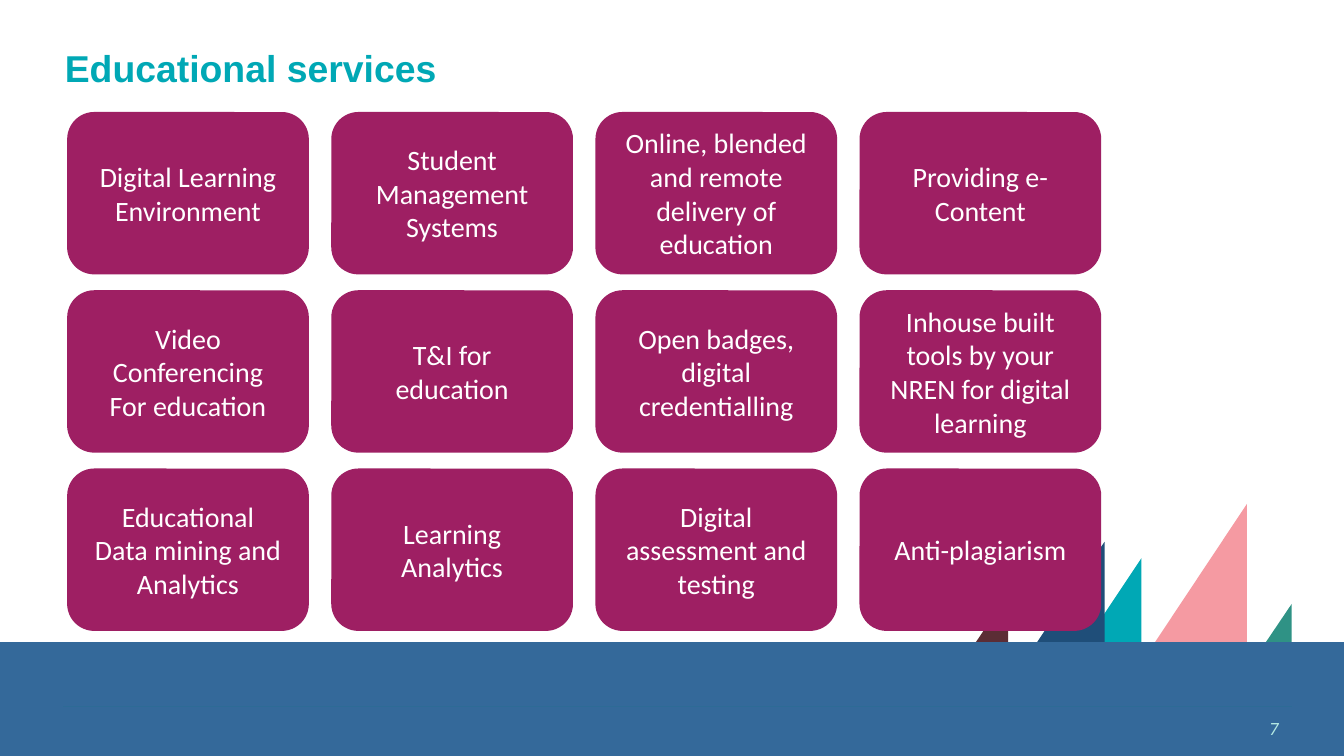
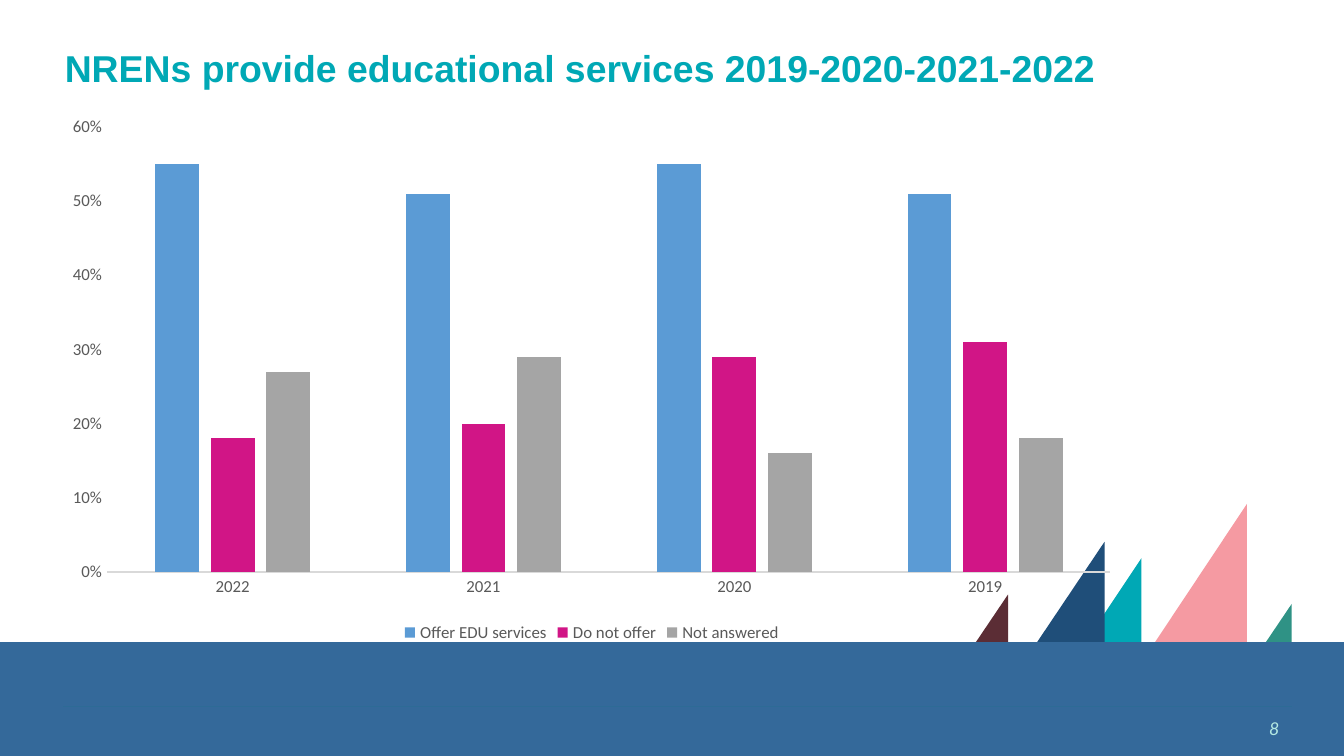
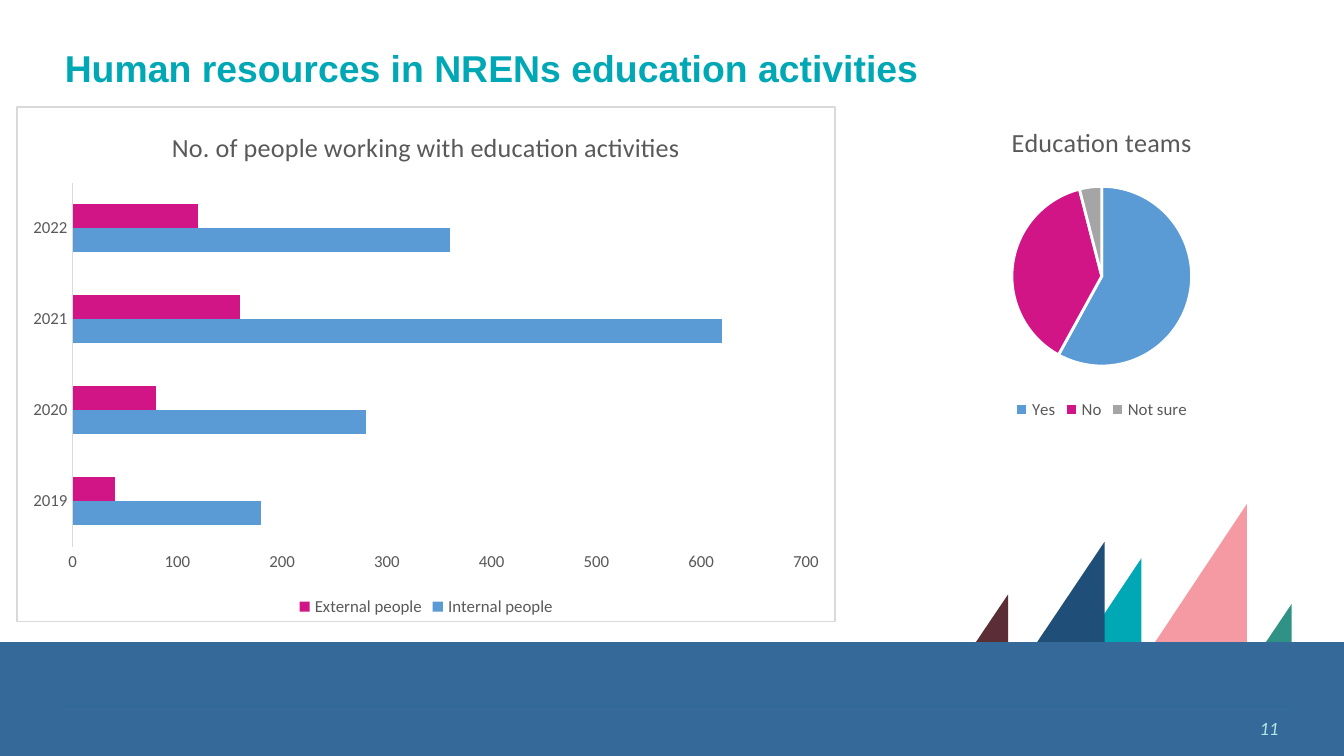
"""Build three slides on the educational services that NRENs offer."""
import dataclasses
import typing

import lxml.etree
import pptx
import pptx.chart.chart
import pptx.chart.data
import pptx.dml.color
import pptx.enum.chart
import pptx.enum.shapes
import pptx.enum.text
import pptx.oxml
import pptx.oxml.ns
import pptx.slide
import pptx.util

Pt = pptx.util.Pt
SHAPE = pptx.enum.shapes.MSO_SHAPE
ALIGN = pptx.enum.text.PP_ALIGN
MIDDLE = pptx.enum.text.MSO_ANCHOR.MIDDLE
KIND = pptx.enum.chart.XL_CHART_TYPE


@dataclasses.dataclass(frozen=True)
class Theme:
    """Colours, fonts and type sizes of the deck."""
    teal: str = "00A8B5"
    band: str = "34699A"
    rule: str = "2D6B96"
    number: str = "B4E9E2"
    card: str = "9E1F63"
    white: str = "FFFFFF"
    blue: str = "5B9BD5"
    pink: str = "D11586"
    grey: str = "A5A5A5"
    axis: str = "D9D9D9"
    chart_text: str = "595959"
    heading_font: str = "Arial"
    body_font: str = "Calibri"
    title_size: float = 20
    card_size: float = 15
    chart_title_size: float = 14
    number_size: float = 10
    chart_size: float = 9


THEME = Theme()


class Area(typing.NamedTuple):
    """A place on the slide, in points."""
    left: float
    top: float
    width: float
    height: float

    def lengths(self) -> list[pptx.util.Length]:
        """Give the four lengths that add methods take."""
        return [Pt(value) for value in self]


class Sail(typing.NamedTuple):
    """A triangle standing on the band, before its quarter turn."""
    area: Area
    color: str


class Series(typing.NamedTuple):
    """A named row of chart values with its colour."""
    name: str
    values: tuple[float, ...]
    color: str = ""


@dataclasses.dataclass(frozen=True)
class ChartPlan:
    """All that one chart needs."""
    kind: pptx.enum.chart.XL_CHART_TYPE
    area: Area
    categories: tuple[str, ...]
    series: tuple[Series, ...]
    title: str = ""
    number_format: str = "General"
    top_value: float = 0
    step: float = 0
    gap: int = 0
    overlap: int = 0
    point_colors: tuple[str, ...] = ()
    framed: bool = False


BAND = Area(0, 344, 720, 61)
BAND_STEP = Area(463.5, 344, 256.5, 27.5)
NUMBER_AREA = Area(530, 379.5, 162, 21.5)
SAILS = (
    Sail(Area(561.5, 309, 60, 40), THEME.teal),
    Sail(Area(537, 301, 65.5, 44), "1F4E79"),
    Sail(Area(596, 284.5, 86.5, 57.5), "F59AA2"),
    Sail(Area(504, 325.5, 43, 29), "5B2D35"),
    Sail(Area(656, 330.5, 43, 29), "2F9285"),
)
FIRST_CARD = Area(36, 60, 129.5, 87)
COLUMN_STEP, ROW_STEP = 141.5, 95.5
SERVICES = (
    ("Digital Learning Environment", "Student\nManagement\nSystems",
     "Online, blended and remote delivery of education", "Providing e-Content"),
    ("Video\nConferencing\nFor education", "T&I for\neducation",
     "Open badges, digital credentialling",
     "Inhouse built tools by your NREN for digital learning"),
    ("Educational\nData mining and Analytics", "Learning\nAnalytics",
     "Digital assessment and testing", "Anti-plagiarism"),
)
OFFERS = ChartPlan(
    KIND.COLUMN_CLUSTERED, Area(27.5, 57, 579, 290),
    ("2022", "2021", "2020", "2019"),
    (Series("Offer EDU services", (0.55, 0.51, 0.55, 0.51), THEME.blue),
     Series("Do not offer", (0.18, 0.2, 0.29, 0.31), THEME.pink),
     Series("Not answered", (0.27, 0.29, 0.16, 0.18), THEME.grey)),
    number_format="0%", top_value=0.6, step=0.1, gap=219, overlap=-27)
PEOPLE = ChartPlan(
    KIND.BAR_CLUSTERED, Area(8.75, 57, 439, 276.5),
    ("2019", "2020", "2021", "2022"),
    (Series("Internal people", (180, 280, 620, 360), THEME.blue),
     Series("External people", (40, 80, 160, 120), THEME.pink)),
    title="No. of people working with education activities",
    top_value=700, step=100, gap=182, framed=True)
TEAMS = ChartPlan(
    KIND.PIE, Area(448, 57, 284.5, 170.5), ("Yes", "No", "Not sure"),
    (Series("Series 1", (58, 38, 4)),), title="Education teams",
    point_colors=(THEME.blue, THEME.pink, THEME.grey))


def rgb(color: str) -> pptx.dml.color.RGBColor:
    """Turn a hex colour into an RGB value."""
    return pptx.dml.color.RGBColor.from_string(color)


def style_font(font: typing.Any, size: float, color: str, name: str = THEME.body_font,
               bold: bool = False, italic: bool = False) -> None:
    """Set every trait of a font."""
    font.name, font.size, font.bold, font.italic = name, Pt(size), bold, italic
    font.color.rgb = rgb(color)


def add_filled(shapes: typing.Any, kind: SHAPE, area: Area, color: str) -> typing.Any:
    """Add a flat shape without outline or shadow."""
    shape = shapes.add_shape(kind, *area.lengths())
    shape.shadow.inherit = False
    shape.fill.solid()
    shape.fill.fore_color.rgb = rgb(color)
    shape.line.fill.background()
    return shape


def add_scenery(page: pptx.slide.Slide) -> None:
    """Draw the band, its rule and the sails."""
    add_filled(page.shapes, SHAPE.RECTANGLE, BAND, THEME.band)
    rule = page.shapes.add_connector(pptx.enum.shapes.MSO_CONNECTOR.STRAIGHT,
                                     Pt(34), Pt(378.5), Pt(692), Pt(378.5))
    rule.line.color.rgb = rgb(THEME.rule)
    rule.line.width = Pt(0.25)
    lxml.etree.SubElement(rule._element.spPr, pptx.oxml.ns.qn("a:effectLst"))
    fleet = page.shapes.add_group_shape()
    for sail in SAILS:
        triangle = add_filled(fleet.shapes, SHAPE.ISOSCELES_TRIANGLE, sail.area, sail.color)
        triangle.adjustments[0] = 0
        triangle.rotation = 270
    add_filled(page.shapes, SHAPE.RECTANGLE, BAND_STEP, THEME.band)


def add_page(deck: typing.Any, title: str, number: int,
             title_width: float = 507) -> pptx.slide.Slide:
    """Add a slide with scenery, title and page number."""
    page = deck.slides.add_slide(deck.slide_layouts[5])
    add_scenery(page)
    box = page.shapes.title
    box.left, box.top, box.width, box.height = Area(27.5, 10, title_width, 55).lengths()
    box.text_frame.vertical_anchor = MIDDLE
    para = box.text_frame.paragraphs[0]
    para.alignment = ALIGN.LEFT
    para.line_spacing = 0.9
    span = para.add_run()
    span.text = title
    style_font(span.font, THEME.title_size, THEME.teal, THEME.heading_font, bold=True)
    box = page.shapes.add_textbox(*NUMBER_AREA.lengths())
    box.text_frame.word_wrap = True
    box.text_frame.vertical_anchor = MIDDLE
    para = box.text_frame.paragraphs[0]
    para.alignment = ALIGN.RIGHT
    span = para.add_run()
    span.text = str(number)
    style_font(span.font, THEME.number_size, THEME.number, italic=True)
    return page


def add_card(page: pptx.slide.Slide, area: Area, label: str) -> None:
    """Add a rounded card with one paragraph per label line."""
    card = add_filled(page.shapes, SHAPE.ROUNDED_RECTANGLE, area, THEME.card)
    frame = card.text_frame
    frame.word_wrap = True
    frame.vertical_anchor = MIDDLE
    for index, line in enumerate(label.split("\n")):
        para = frame.add_paragraph() if index else frame.paragraphs[0]
        para.alignment = ALIGN.CENTER
        span = para.add_run()
        span.text = line
        style_font(span.font, THEME.card_size, THEME.white)


def style_axes(chart: pptx.chart.chart.Chart, plan: ChartPlan) -> None:
    """Format both axes and the bars' spacing."""
    for axis in (chart.category_axis, chart.value_axis):
        axis.major_tick_mark = axis.minor_tick_mark = pptx.enum.chart.XL_TICK_MARK.NONE
        axis.has_major_gridlines = False
        style_font(axis.tick_labels.font, THEME.chart_size, THEME.chart_text)
    chart.category_axis.format.line.color.rgb = rgb(THEME.axis)
    chart.category_axis.format.line.width = Pt(0.75)
    scale = chart.value_axis
    scale.format.line.fill.background()
    scale.minimum_scale, scale.maximum_scale = 0, plan.top_value
    scale.major_unit = plan.step
    scale.tick_labels.number_format = plan.number_format
    scale.tick_labels.number_format_is_linked = False
    chart.plots[0].gap_width = plan.gap
    chart.plots[0].overlap = plan.overlap


def frame_chart(chart: pptx.chart.chart.Chart) -> None:
    """Give the chart area a white fill and a thin border."""
    frame = pptx.oxml.parse_xml(
        f'<c:spPr {pptx.oxml.ns.nsdecls("c", "a")}>'
        f'<a:solidFill><a:srgbClr val="{THEME.white}"/></a:solidFill>'
        f'<a:ln w="{Pt(0.75)}"><a:solidFill><a:srgbClr val="{THEME.axis}"/>'
        '</a:solidFill></a:ln></c:spPr>')
    chart._chartSpace.find(pptx.oxml.ns.qn("c:txPr")).addprevious(frame)


def add_chart(page: pptx.slide.Slide, plan: ChartPlan) -> None:
    """Add a chart from its plan."""
    data = pptx.chart.data.CategoryChartData(number_format=plan.number_format)
    data.categories = plan.categories
    for series in plan.series:
        data.add_series(series.name, series.values)
    chart = page.shapes.add_chart(plan.kind, *plan.area.lengths(), data).chart
    style_font(chart.font, THEME.chart_size, THEME.chart_text)
    chart.has_title = bool(plan.title)
    if plan.title:
        span = chart.chart_title.text_frame.paragraphs[0].add_run()
        span.text = plan.title
        style_font(span.font, THEME.chart_title_size, THEME.chart_text)
    chart.has_legend = True
    chart.legend.position = pptx.enum.chart.XL_LEGEND_POSITION.BOTTOM
    chart.legend.include_in_layout = False
    style_font(chart.legend.font, THEME.chart_size, THEME.chart_text)
    plot = chart.plots[0]
    plot.vary_by_categories = bool(plan.point_colors)
    for drawn, series in zip(plot.series, plan.series):
        if series.color:
            drawn.format.fill.solid()
            drawn.format.fill.fore_color.rgb = rgb(series.color)
        for index, color in enumerate(plan.point_colors):
            look = drawn.points[index].format
            look.fill.solid()
            look.fill.fore_color.rgb = rgb(color)
            look.line.color.rgb = rgb(THEME.white)
            look.line.width = Pt(1.5)
    if plan.kind != KIND.PIE:
        style_axes(chart, plan)
    if plan.framed:
        frame_chart(chart)


def main() -> None:
    """Build and save the deck."""
    deck = pptx.Presentation()
    deck.slide_width, deck.slide_height = Pt(720), Pt(405)
    page = add_page(deck, "Educational services", 7)
    for row, labels in enumerate(SERVICES):
        for column, label in enumerate(labels):
            area = FIRST_CARD._replace(left=FIRST_CARD.left + column * COLUMN_STEP,
                                       top=FIRST_CARD.top + row * ROW_STEP)
            add_card(page, area, label)
    page = add_page(deck, "NRENs provide educational services 2019-2020-2021-2022", 8, 664.5)
    add_chart(page, OFFERS)
    page = add_page(deck, "Human resources in NRENs education activities", 11)
    add_chart(page, PEOPLE)
    add_chart(page, TEAMS)
    deck.save("out.pptx")


if __name__ == "__main__":
    main()
